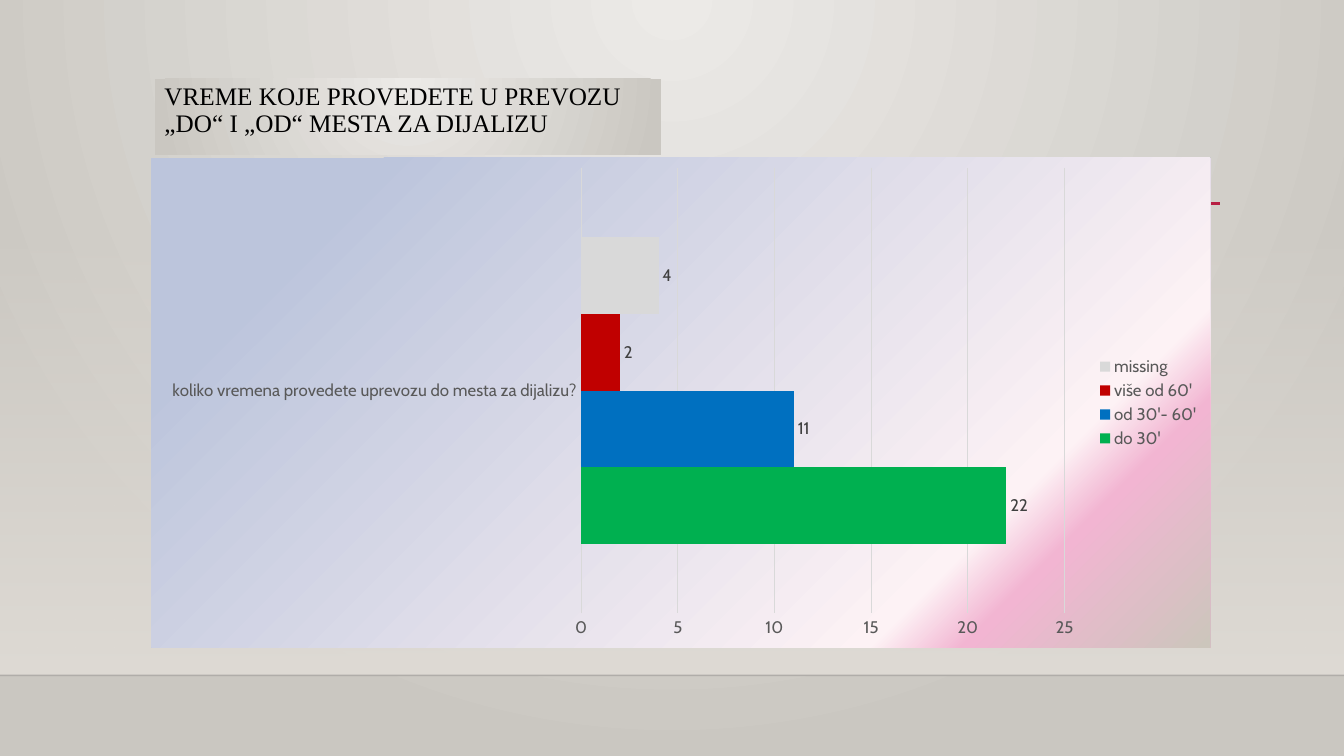
from lxml.etree import SubElement, fromstring
from pptx import Presentation
from pptx.chart.data import CategoryChartData
from pptx.dml.color import RGBColor
from pptx.enum.chart import (XL_CHART_TYPE, XL_LABEL_POSITION,
                             XL_LEGEND_POSITION, XL_TICK_MARK)
from pptx.enum.text import MSO_ANCHOR
from pptx.oxml.ns import nsdecls, qn
from pptx.util import Inches, Pt

WIDE, HIGH = Inches(13.33), Inches(7.5)
FLOOR = 6.7 / 7.5  # share of the height where the wall meets the floor
STONE = [(0, "ECEAE7"), (100, "CAC7C1")]
GLOW = ('<a:path path="circle">'
        '<a:fillToRect l="43000" t="0" r="43000" b="100000"/></a:path>')
BLUSH = [(8, "BCC5DC"), (15, "BCC5DC"), (78, "FDF2F5"),
         (84, "F2B5D2"), (100, "CCC6BC")]
GREY, DARK = "595959", "404040"
TIMES = [("do 30'", 22, "00B050"), ("od 30'- 60'", 11, "0070C0"),
         ("više od 60'", 2, "C00000"), ("missing", 4, "D9D9D9")]


def color(code):
    return RGBColor.from_string(code)


def place(left, top, wide, high):
    """Turn shares of the slide into lengths."""
    return int(left * WIDE), int(top * HIGH), int(wide * WIDE), int(high * HIGH)


def blend(root, stops, shade):
    """Swap the first solid fill under root for a gradient."""
    marks = ""
    for pos, code, *alpha in stops:
        clear = "".join(f'<a:alpha val="{a * 1000}"/>' for a in alpha)
        marks += (f'<a:gs pos="{pos * 1000}">'
                  f'<a:srgbClr val="{code}">{clear}</a:srgbClr></a:gs>')
    solid = root.find(".//" + qn("a:solidFill"))
    solid.getparent().replace(solid, fromstring(
        f'<a:gradFill {nsdecls("a")} rotWithShape="1">'
        f'<a:gsLst>{marks}</a:gsLst>{shade}</a:gradFill>'))


def slant(angle):
    return f'<a:lin ang="{angle * 60000}" scaled="0"/>'


def style(font, size, code, name="Cabin"):
    font.size, font.name, font.bold = Pt(size), name, False
    font.color.rgb = color(code)


def add_wall(slide):
    wall = slide.shapes.add_shape(1, *place(0, 0.295, 1, FLOOR - 0.295))
    wall.shadow.inherit = False
    wall.line.fill.background()
    wall.fill.solid()
    blend(wall.element, [(0, "DFDBD5", 0), (100, "DFDBD5")], slant(90))


def add_rule(slide, left, right, top, code, width, alpha=100):
    x, y, span, _ = place(left, top, right - left, 0)
    rule = slide.shapes.add_connector(1, x, y, x + span, y)
    rule.line.width = Pt(width)
    rule.line.color.rgb = color(code)
    if alpha < 100:
        tint = rule.element.find(".//" + qn("a:srgbClr"))
        SubElement(tint, qn("a:alpha")).set("val", str(alpha * 1000))
    SubElement(rule.element.spPr, qn("a:effectLst"))


def add_title(slide, text):
    box = slide.shapes.add_textbox(*place(0.115, 0.104, 0.377, 0.101))
    box.fill.solid()
    blend(box.element, STONE, GLOW)
    frame = box.text_frame
    frame.word_wrap = True
    frame.vertical_anchor = MSO_ANCHOR.TOP
    frame.text = text
    line = frame.paragraphs[0]
    line.line_spacing = 0.9
    style(line.runs[0].font, 18, "000000", "Times New Roman")


def add_bars(slide):
    data = CategoryChartData()
    data.categories = ["koliko vremena provedete uprevozu do mesta za dijalizu?"]
    for name, count, _ in TIMES:
        data.add_series(name, [count])
    chart = slide.shapes.add_chart(
        XL_CHART_TYPE.BAR_CLUSTERED, *place(0.1125, 0.209, 0.788, 0.647),
        data).chart
    chart.has_title = False
    style(chart.font, 10, "000000")

    # Bars and their labels
    plot = chart.plots[0]
    plot.gap_width, plot.overlap, plot.vary_by_categories = 182, 0, False
    for bar, (_, _, code) in zip(plot.series, TIMES):
        bar.format.fill.solid()
        bar.format.fill.fore_color.rgb = color(code)
        tags = bar.data_labels
        tags.show_value = True
        tags.position = XL_LABEL_POSITION.OUTSIDE_END
        style(tags.font, 12, DARK)

    # Axes
    for axis in (chart.category_axis, chart.value_axis):
        axis.major_tick_mark = axis.minor_tick_mark = XL_TICK_MARK.NONE
        style(axis.tick_labels.font, 12, GREY)
    scale = chart.value_axis
    scale.minimum_scale, scale.maximum_scale, scale.major_unit = 0, 25, 5
    scale.format.line.fill.background()
    for edge in (chart.category_axis.format.line,
                 scale.major_gridlines.format.line):
        edge.width = Pt(0.75)
        edge.color.rgb = color("D9D9D9")

    # Legend
    chart.has_legend = True
    chart.legend.position = XL_LEGEND_POSITION.RIGHT
    chart.legend.include_in_layout = False
    style(chart.legend.font, 12, GREY)

    # Chart area
    area = fromstring(f'<c:spPr {nsdecls("c", "a")}><a:solidFill/>'
                      '<a:ln><a:noFill/></a:ln></c:spPr>')
    blend(area, BLUSH, slant(45))
    chart.element.find(qn("c:chart")).addnext(area)


def main():
    deck = Presentation()
    deck.slide_width, deck.slide_height = WIDE, HIGH
    slide = deck.slides.add_slide(deck.slide_layouts[6])
    slide.background.fill.solid()
    blend(slide.element, STONE, GLOW)
    add_wall(slide)
    add_rule(slide, 0, 1, FLOOR, "000001", 1, 20)
    add_rule(slide, 0.119, 0.908, 0.269, "B71E42", 2.5)
    add_title(slide, "VREME KOJE PROVEDETE U PREVOZU „DO“ I „OD“ MESTA ZA DIJALIZU")
    add_bars(slide)
    deck.save("out.pptx")


if __name__ == "__main__":
    main()
